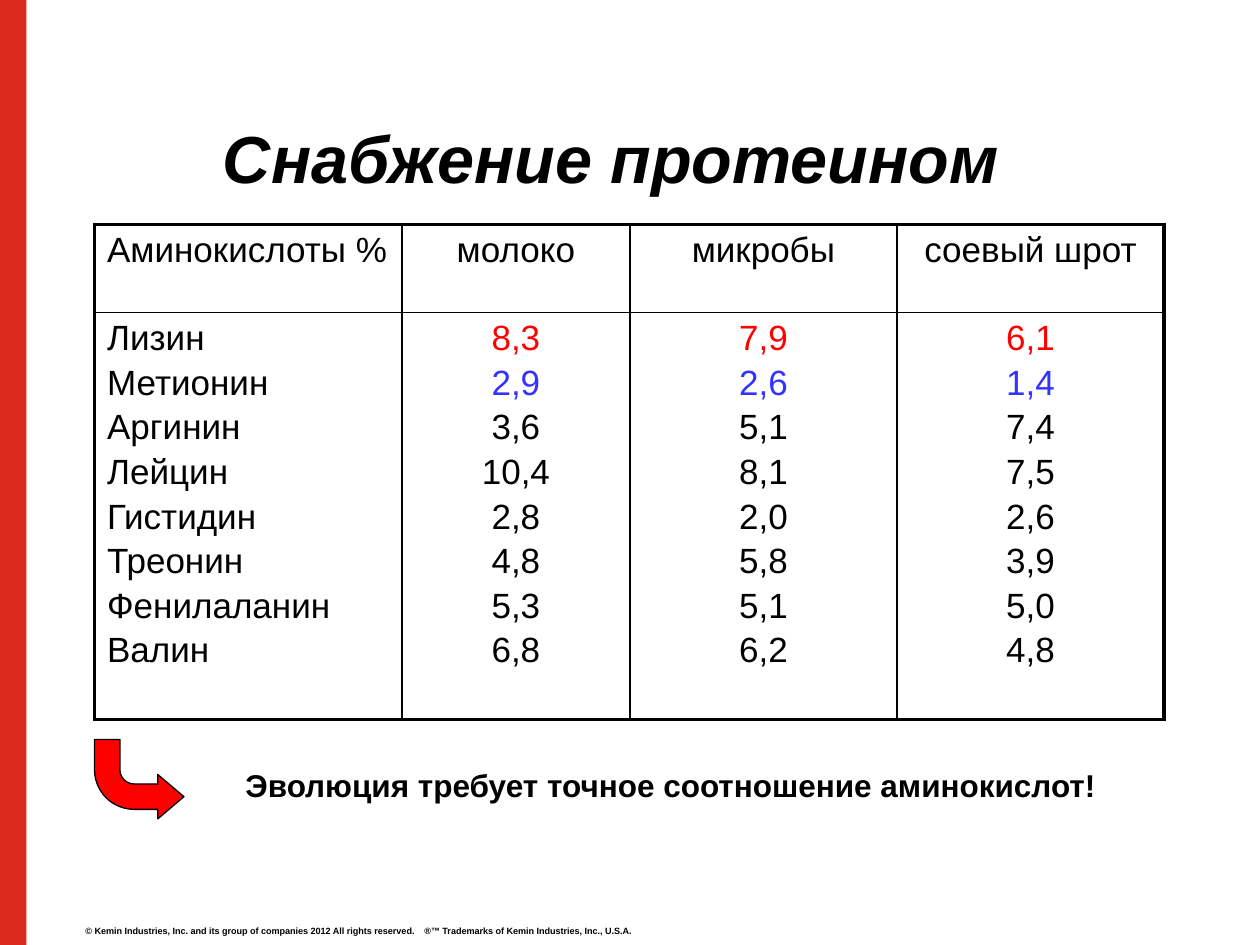
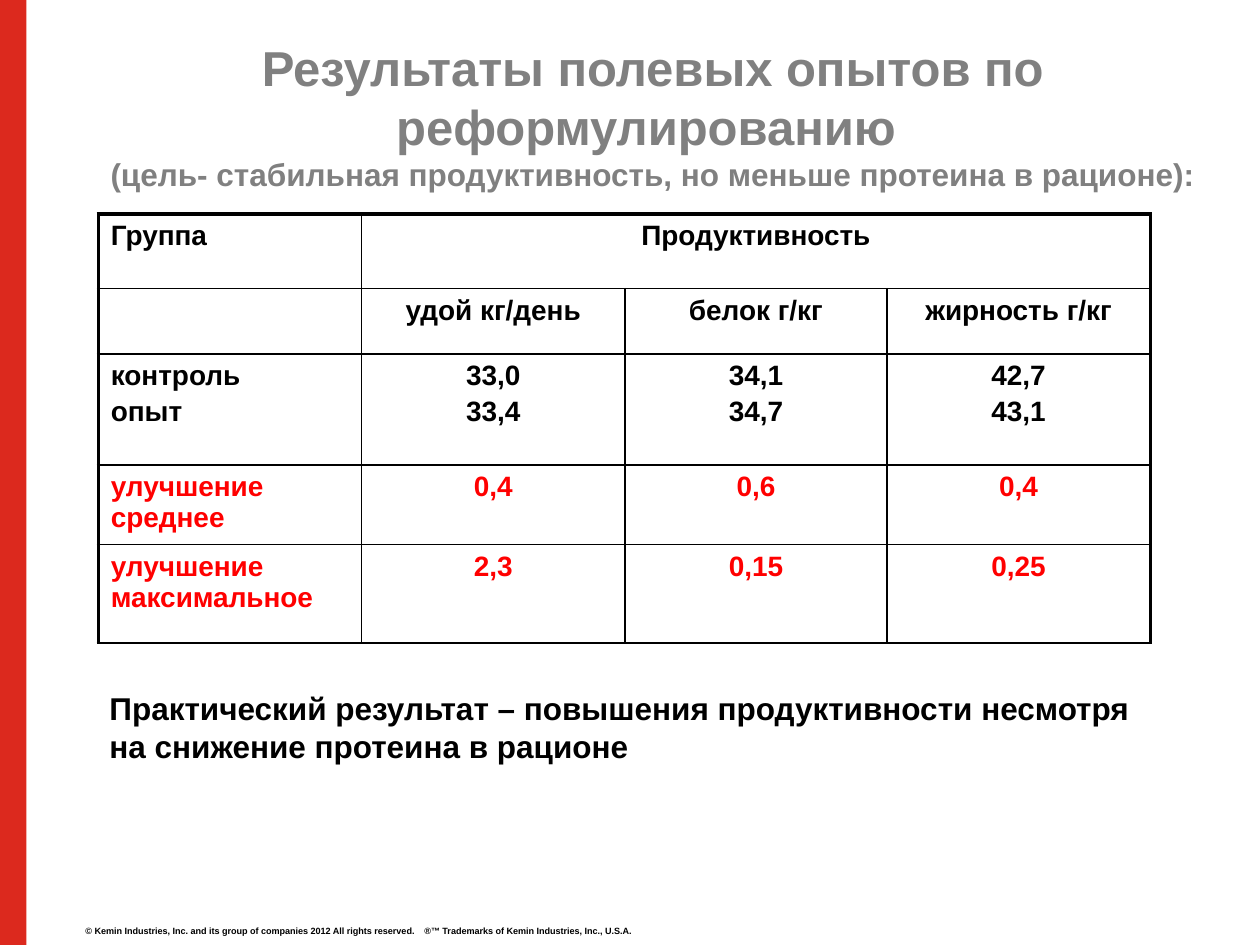
"""Build two slides on protein supply and field trial results."""
from dataclasses import dataclass

import pptx
import pptx.dml.color
import pptx.enum.shapes
import pptx.enum.text
import pptx.oxml
import pptx.oxml.ns
import pptx.util

Inches = pptx.util.Inches
Pt = pptx.util.Pt
Align = pptx.enum.text.PP_ALIGN
Anchor = pptx.enum.text.MSO_ANCHOR
Preset = pptx.enum.shapes.MSO_SHAPE


@dataclass(frozen=True)
class Theme:
    font: str = "Arial"
    black: str = "000000"
    white: str = "FFFFFF"
    grey: str = "808080"
    band: str = "DC291E"
    red: str = "FF0000"
    blue: str = "3333FF"
    title: int = 38
    long_title: int = 28
    note: int = 18
    large_table: int = 20
    small_table: int = 16
    footer: int = 9
    thick: float = 2.25
    thin: float = 1
    outline: float = 0.75
    line_gap: float = 0.16


FOOTER = (
    "© Kemin Industries, Inc. and its group of companies 2012 All rights reserved."
    "\t®™ Trademarks of Kemin Industries, Inc., U.S.A."
)


def rgb(colour):
    return pptx.dml.color.RGBColor.from_string(colour)


def set_all(target, values):
    for name, value in values.items():
        setattr(target, name, value)


class Deck:
    """Holds the theme, the presentation and the current slide."""

    def __init__(self, theme):
        self.theme = theme
        self.presentation = pptx.Presentation()
        self.presentation.slide_width = Inches(10)
        self.presentation.slide_height = Inches(7.5)
        self.slide = None

    def new_slide(self):
        layout = self.presentation.slide_layouts[6]
        self.slide = self.presentation.slides.add_slide(layout)
        self.shape(Preset.RECTANGLE, (0, 0, 0.21, 7.5), self.theme.band)
        self.footer()

    def shape(self, preset, box, fill, line=None):
        shape = self.slide.shapes.add_shape(preset, *map(Inches, box))
        shape.shadow.inherit = False
        shape.fill.solid()
        shape.fill.fore_color.rgb = rgb(fill)
        if line:
            shape.line.color.rgb = rgb(line)
            shape.line.width = Pt(self.theme.outline)
        else:
            shape.line.fill.background()
        return shape

    def run(self, paragraph, text, size, colour, bold=True, italic=False):
        run = paragraph.add_run()
        run.text = text
        set_all(run.font, {"name": self.theme.font, "size": Pt(size),
                           "bold": bold, "italic": italic})
        run.font.color.rgb = rgb(colour)
        return run

    def text_box(self, box, align=Align.LEFT, anchor=Anchor.TOP):
        frame = self.slide.shapes.add_textbox(*map(Inches, box)).text_frame
        set_all(frame, {"word_wrap": True, "vertical_anchor": anchor})
        paragraph = frame.paragraphs[0]
        paragraph.alignment = align
        return paragraph

    def title(self, box, text, size, colour, italic=False, subtitle=None):
        paragraph = self.text_box(box, Align.CENTER, Anchor.MIDDLE)
        self.run(paragraph, text, size, colour, italic=italic)
        if subtitle:
            paragraph.add_line_break()
            self.run(paragraph, subtitle, self.theme.note, colour)

    def note(self, box, text):
        self.run(self.text_box(box), text, self.theme.note, self.theme.black)

    def footer(self):
        paragraph = self.text_box((0.58, 7.28, 6, 0.2))
        properties = paragraph._p.get_or_add_pPr()
        properties.append(pptx.oxml.parse_xml(
            f'<a:tabLst {pptx.oxml.ns.nsdecls("a")}>'
            f'<a:tab pos="{Inches(2.69)}" algn="l"/></a:tabLst>'))
        run = self.run(paragraph, FOOTER, self.theme.footer, self.theme.black)
        run._r.get_or_add_rPr().set("baseline", "30000")

    def down_right_arrow(self, box):
        shape = self.shape(Preset.BENT_ARROW, box, self.theme.red, self.theme.black)
        shape._element.spPr.xfrm.set("flipV", "1")
        for index, value in enumerate((0.32, 0.28, 0.33, 0.5)):
            shape.adjustments[index] = value

    def borders(self, cell, widths):
        properties = cell._tc.get_or_add_tcPr()
        for side, width in zip("LRTB", widths):
            properties.append(pptx.oxml.parse_xml(
                f'<a:ln{side} {pptx.oxml.ns.nsdecls("a")} w="{Pt(width)}">'
                f'<a:solidFill><a:srgbClr val="{self.theme.black}"/></a:solidFill>'
                f'</a:ln{side}>'))

    def fill_cell(self, cell, lines, align, size, bold, colours):
        for index, (line, colour) in enumerate(zip(lines, colours)):
            frame = cell.text_frame
            paragraph = frame.add_paragraph() if index else frame.paragraphs[0]
            paragraph.alignment = align
            if index:
                paragraph.space_before = Pt(size * self.theme.line_gap)
            self.run(paragraph, line, size, colour, bold)

    def table(self, corner, widths, heights, rows, size, colour_of,
              bold=False, bottom=None, merges=()):
        theme = self.theme
        box = (*corner, sum(widths), sum(heights))
        table = self.slide.shapes.add_table(
            len(rows), len(widths), *map(Inches, box)).table
        set_all(table, {"first_row": False, "horz_banding": False})
        for column, width in zip(table.columns, widths):
            column.width = Inches(width)
        for row, height in zip(table.rows, heights):
            row.height = Inches(height)
        for first, last in merges:
            table.cell(*first).merge(table.cell(*last))
        for r, row in enumerate(rows):
            for c, text in enumerate(row):
                cell = table.cell(r, c)
                if cell.is_spanned:
                    continue
                right = c + cell.span_width == len(widths)
                self.borders(cell, (
                    theme.thin if c else theme.thick,
                    theme.thick if right else theme.thin,
                    theme.thin if r else theme.thick,
                    bottom or theme.thick if r == len(rows) - 1 else theme.thin))
                cell.fill.solid()
                cell.fill.fore_color.rgb = rgb(theme.white)
                if text:
                    lines = text.split("\n")
                    colours = [colour_of(r, c, n) for n in range(len(lines))]
                    self.fill_cell(cell, lines, Align.CENTER if c else Align.LEFT,
                                   size, bold, colours)


def protein_supply(deck):
    theme = deck.theme
    amino_acids = [
        ("Лизин", "8,3", "7,9", "6,1"),
        ("Метионин", "2,9", "2,6", "1,4"),
        ("Аргинин", "3,6", "5,1", "7,4"),
        ("Лейцин", "10,4", "8,1", "7,5"),
        ("Гистидин", "2,8", "2,0", "2,6"),
        ("Треонин", "4,8", "5,8", "3,9"),
        ("Фенилаланин", "5,3", "5,1", "5,0"),
        ("Валин", "6,8", "6,2", "4,8"),
    ]
    limiting = {0: theme.red, 1: theme.blue}

    def colour_of(row, column, line):
        return limiting.get(line, theme.black) if row and column else theme.black

    deck.new_slide()
    deck.title((1.06, 0.83, 7.58, 0.83), "Снабжение протеином",
               theme.title, theme.black, italic=True)
    deck.table((0.75, 1.78), (2.44, 1.81, 2.12, 2.12), (0.7, 3.23),
               [("Аминокислоты %", "молоко", "микробы", "соевый шрот"),
                ["\n".join(column) for column in zip(*amino_acids)]],
               theme.large_table, colour_of)
    deck.down_right_arrow((0.75, 5.87, 0.71, 0.63))
    deck.note((1.85, 6.03, 7.64, 0.4),
              "Эволюция требует точное соотношение аминокислот!")


def field_trials(deck):
    theme = deck.theme
    results = [
        ("Группа", "Продуктивность", "", ""),
        ("", "удой кг/день", "белок г/кг", "жирность г/кг"),
        ("контроль\nопыт", "33,0\n33,4", "34,1\n34,7", "42,7\n43,1"),
        ("улучшение среднее", "0,4", "0,6", "0,4"),
        ("улучшение максимальное", "2,3", "0,15", "0,25"),
    ]

    def colour_of(row, column, line):
        return theme.red if row >= 3 else theme.black

    deck.new_slide()
    deck.title((0.77, 0.5, 8.82, 0.83),
               "Результаты полевых опытов по реформулированию ",
               theme.long_title, theme.grey,
               subtitle="(цель- стабильная продуктивность, "
                        "но меньше протеина в рационе):")
    deck.table((0.78, 1.7), (2.09, 2.09, 2.08, 2.09),
               (0.59, 0.52, 0.88, 0.63, 0.78), results, theme.small_table,
               colour_of, bold=True, bottom=theme.thin,
               merges=[((0, 1), (0, 3))])
    deck.note((0.77, 5.42, 8.35, 0.71),
              "Практический результат – повышения продуктивности "
              "несмотря на снижение протеина в рационе")


def main():
    deck = Deck(Theme())
    protein_supply(deck)
    field_trials(deck)
    deck.presentation.save("out.pptx")


if __name__ == "__main__":
    main()
